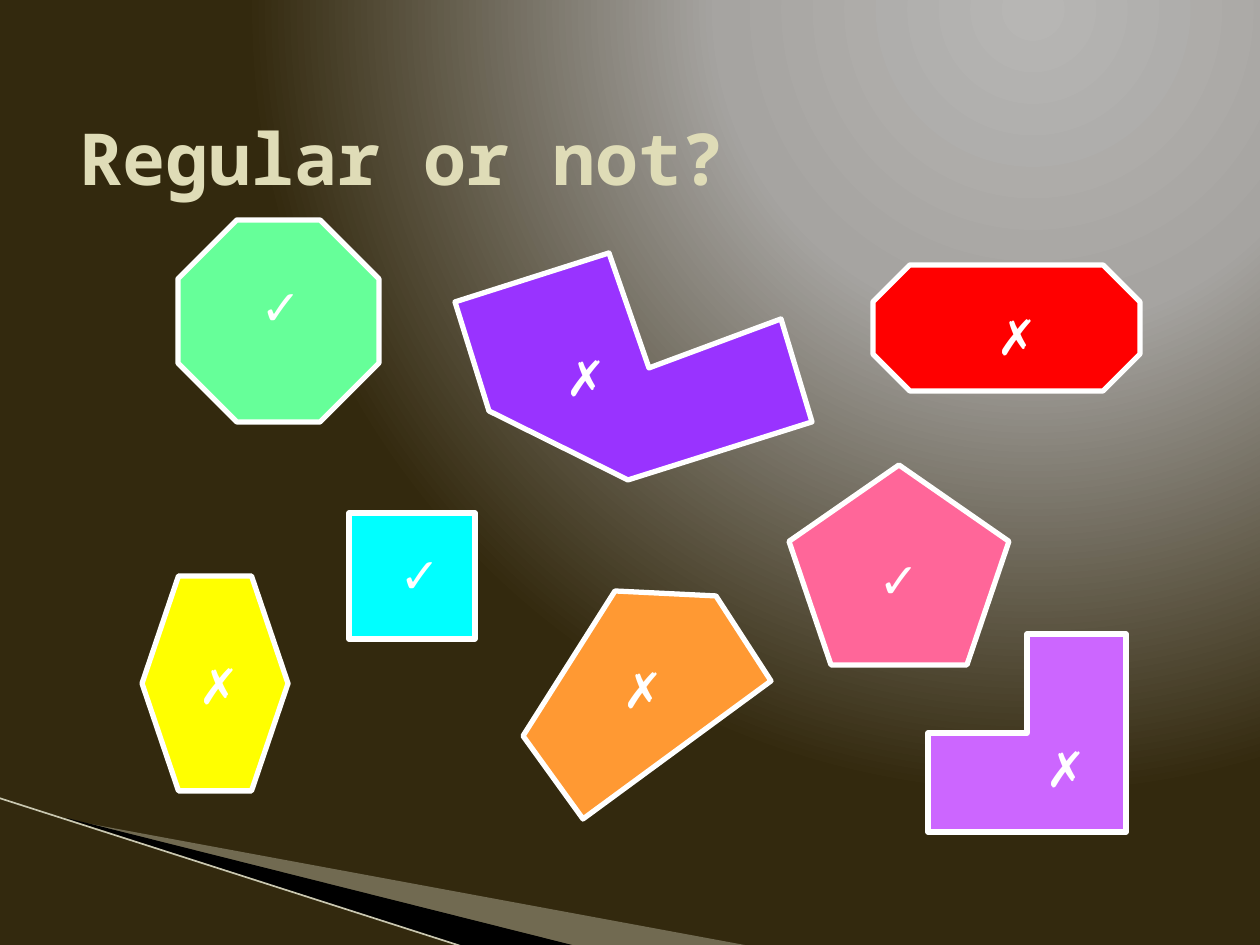
from lxml.etree import SubElement
from pptx import Presentation
from pptx.dml.color import RGBColor
from pptx.enum.shapes import MSO_CONNECTOR as Connector, MSO_SHAPE as Shape
from pptx.enum.text import MSO_ANCHOR as Anchor
from pptx.oxml.ns import qn
from pptx.util import Emu, Pt

EMU_PER_PX = 914400 / 126
COLORS = {
    "glow": "B7B6B4", "haze": "A6A4A1", "earth": "33290E",
    "wedge": "CECCB7", "black": "000000", "edge": "C9C7B0",
    "title": "DFDCB7", "white": "FFFFFF", "green": "66FF99",
    "yellow": "FFFF00", "pink": "FF6699", "red": "FF0000",
    "orange": "FF9933", "violet": "9933FF", "cyan": "00FFFF",
    "lilac": "CC66FF",
}
PRESETS = [
    (Shape.OCTAGON, (178, 220, 201, 202), "green"),
    (Shape.HEXAGON, (142, 576, 146, 215), "yellow"),
    (Shape.REGULAR_PENTAGON, (789, 465, 220, 200), "pink"),
    (Shape.OCTAGON, (873, 265, 267, 126), "red"),
    (Shape.RECTANGLE, (349, 513, 126, 126), "cyan"),
]
OUTLINES = [
    ([(523, 736), (615, 591), (716, 596), (771, 681), (583, 819)], "orange"),
    ([(489, 411), (455, 302), (609, 253), (649, 368), (781, 319), (812, 422),
      (628, 480)], "violet"),
    ([(928, 832), (928, 733), (1027, 733), (1027, 634), (1126, 634),
      (1126, 832)], "lilac"),
]
REGULAR_MARKS = [(387, 538), (866, 543), (248, 270)]
IRREGULAR_MARKS = [(610, 653), (186, 649), (553, 341), (984, 300), (1033, 732)]


def px(value):
    return Emu(round(value * EMU_PER_PX))


def rgb(name):
    return RGBColor.from_string(COLORS[name])


class SlideBuilder:
    """Holds the shared style and the slide being drawn."""

    font = "Arial"
    outline_width = 3

    def __init__(self, slide):
        self.slide = slide

    def background(self, stops, focus):
        """Radial gradient; focus gives the l, t, r, b insets in percent."""
        self.slide.background.fill.gradient()
        gradient = self.slide.element.find(".//" + qn("a:gradFill"))
        for child in list(gradient):
            gradient.remove(child)
        stop_list = SubElement(gradient, qn("a:gsLst"))
        for position, color in stops:
            stop = SubElement(stop_list, qn("a:gs"), pos=str(position * 1000))
            SubElement(stop, qn("a:srgbClr"), val=COLORS[color])
        circle = SubElement(gradient, qn("a:path"), path="circle")
        insets = {side: str(inset * 1000) for side, inset in zip("ltrb", focus)}
        SubElement(circle, qn("a:fillToRect"), **insets)

    def paint(self, shape, fill, outlined=True, opacity=None):
        shape.shadow.inherit = False
        shape.fill.solid()
        shape.fill.fore_color.rgb = rgb(fill)
        if opacity is not None:
            color = shape.fill._xPr.find(".//" + qn("a:srgbClr"))
            SubElement(color, qn("a:alpha"), val=str(opacity * 1000))
        if outlined:
            shape.line.color.rgb = rgb("white")
            shape.line.width = Pt(self.outline_width)
        else:
            shape.line.fill.background()

    def preset(self, kind, box, fill):
        shape = self.slide.shapes.add_shape(kind, *map(px, box))
        self.paint(shape, fill)

    def polygon(self, points, fill, **style):
        builder = self.slide.shapes.build_freeform(*points[0], scale=EMU_PER_PX)
        builder.add_line_segments(points[1:], close=True)
        self.paint(builder.convert_to_shape(), fill, **style)

    def line(self, start, end, color, width):
        connector = self.slide.shapes.add_connector(
            Connector.STRAIGHT, *map(px, start + end))
        connector.line.color.rgb = rgb(color)
        connector.line.width = Pt(width)
        SubElement(connector._element.spPr, qn("a:effectLst"))

    def text(self, words, box, size=28, color="white", font=None, bold=False,
             wrap=True, anchor=Anchor.TOP):
        frame = self.slide.shapes.add_textbox(*map(px, box)).text_frame
        frame.word_wrap = wrap
        frame.vertical_anchor = anchor
        paragraph = frame.paragraphs[0]
        paragraph.text = words
        paragraph.font.name = font or self.font
        paragraph.font.size = Pt(size)
        paragraph.font.bold = bold
        paragraph.font.color.rgb = rgb(color)


def main():
    presentation = Presentation()
    presentation.slide_width, presentation.slide_height = px(1260), px(945)
    builder = SlideBuilder(
        presentation.slides.add_slide(presentation.slide_layouts[6]))

    builder.background([(0, "glow"), (40, "haze"), (100, "earth")],
                       focus=(65, 0, 0, 98))
    builder.polygon([(69, 820), (750, 946), (575, 946), (69, 819)], "wedge",
                    outlined=False, opacity=40)
    builder.polygon([(67, 818), (576, 946), (469, 948), (68, 819)], "black",
                    outlined=False)
    builder.line((-1, 798), (467, 948), "edge", 0.95)
    builder.text("Regular or not?", (67, 78, 1134, 158), size=41, color="title",
                 font="Noto Sans Mono", bold=True, anchor=Anchor.MIDDLE)

    for kind, box, fill in PRESETS:
        builder.preset(kind, box, fill)
    for points, fill in OUTLINES:
        builder.polygon(points, fill)
    for left, top in REGULAR_MARKS:
        builder.text("✓", (left, top, 64, 72), bold=True, wrap=False)
    for left, top in IRREGULAR_MARKS:
        builder.text("✗", (left, top, 60, 72))

    presentation.save("out.pptx")


if __name__ == "__main__":
    main()
